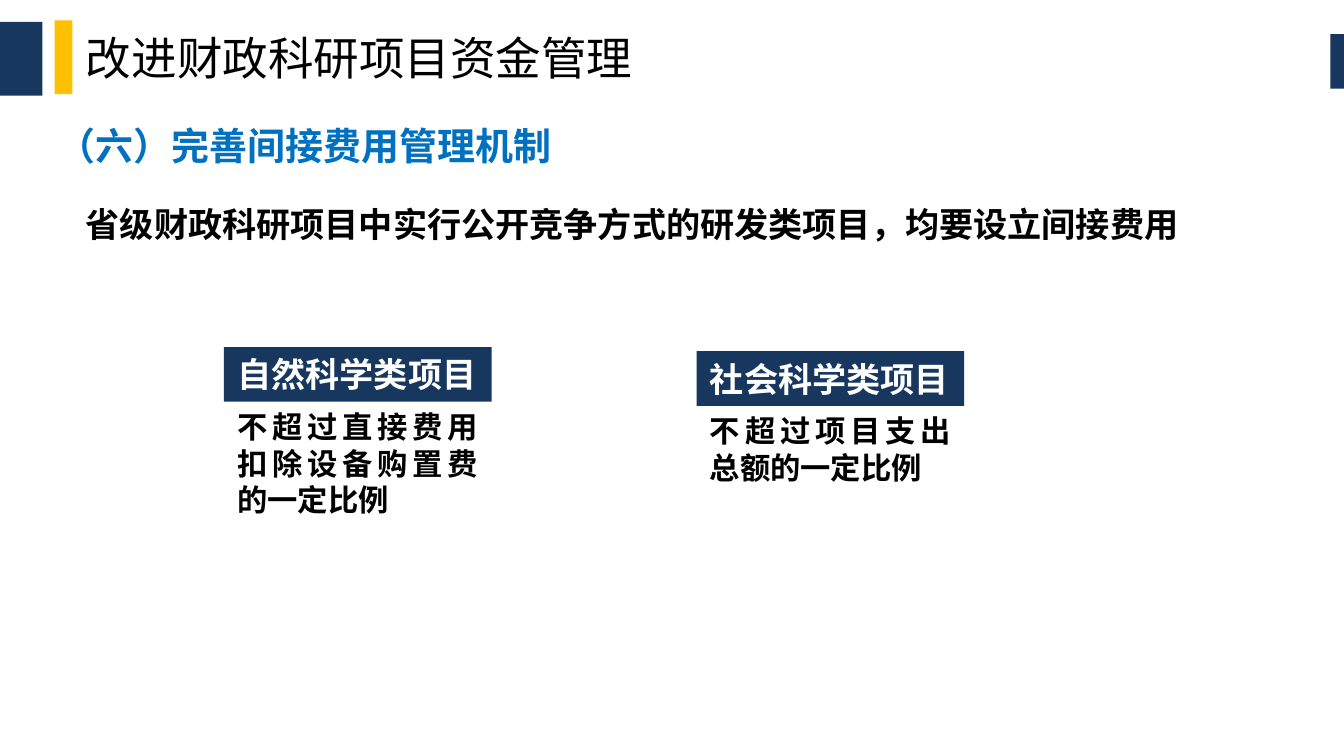
from dataclasses import dataclass

from lxml.etree import SubElement
from pptx import Presentation
from pptx.dml.color import RGBColor
from pptx.enum.lang import MSO_LANGUAGE_ID
from pptx.enum.shapes import MSO_SHAPE
from pptx.enum.text import MSO_ANCHOR, MSO_AUTO_SIZE, PP_ALIGN
from pptx.oxml.ns import qn
from pptx.shapes.autoshape import Shape
from pptx.slide import Slide
from pptx.util import Inches, Pt

NAVY = RGBColor(0x17, 0x37, 0x5E)
GOLD = RGBColor(0xFF, 0xC0, 0x00)
BLUE = RGBColor(0x00, 0x70, 0xC0)
BLACK = RGBColor(0, 0, 0)
WHITE = RGBColor(0xFF, 0xFF, 0xFF)
HAN = "Noto Sans CJK SC"
CARD_W = 1.96
HEAD_H = 0.4


@dataclass(frozen=True)
class Box:
    left: float
    top: float
    width: float
    height: float

    def place(self) -> tuple[int, int, int, int]:
        return (Inches(self.left), Inches(self.top),
                Inches(self.width), Inches(self.height))


@dataclass(frozen=True)
class Bar:
    box: Box
    color: RGBColor


@dataclass(frozen=True)
class Label:
    box: Box
    text: str
    size: int
    face: str = "Arial"
    color: RGBColor = BLACK
    bold: bool = True
    align: PP_ALIGN = PP_ALIGN.LEFT


@dataclass(frozen=True)
class Card:
    left: float
    top: float
    head: str
    body: str
    depth: float


BARS = [
    Bar(Box(-0.01, 0.16, 0.32, 0.54), NAVY),
    Bar(Box(0.4, 0.15, 0.13, 0.54), GOLD),
    Bar(Box(9.74, 0.25, 0.15, 0.4), NAVY),
]
TITLE = Label(Box(0.63, 0.22, 4.73, 0.4), "改进财政科研项目资金管理", 24, HAN, bold=False)
LINES = [
    Label(Box(0.32, 0.85, 3.91, 0.44), "（六）完善间接费用管理机制", 20, HAN, BLUE),
    Label(Box(0.53, 1.44, 8.46, 0.4),
          "省级财政科研项目中实行公开竞争方式的研发类项目，均要设立间接费用", 18, "Calibri"),
]
CARDS = [
    Card(1.64, 2.54, "自然科学类项目", "不超过直接费用扣除设备购置费的一定比例", 0.91),
    Card(5.1, 2.57, "社会科学类项目", "不超过项目支出总额的一定比例", 0.64),
]


def draw_bar(slide: Slide, bar: Bar) -> Shape:
    shape = slide.shapes.add_shape(MSO_SHAPE.RECTANGLE, *bar.box.place())
    shape.shadow.inherit = False
    shape.fill.solid()
    shape.fill.fore_color.rgb = bar.color
    shape.line.fill.background()
    return shape


def write(shape: Shape, label: Label, wrap: bool = True) -> None:
    frame = shape.text_frame
    frame.text = label.text
    frame.word_wrap = wrap
    frame.auto_size = MSO_AUTO_SIZE.SHAPE_TO_FIT_TEXT
    frame.vertical_anchor = MSO_ANCHOR.TOP
    line = frame.paragraphs[0]
    line.alignment = label.align
    font = line.runs[0].font
    font.size = Pt(label.size)
    font.bold = label.bold
    font.color.rgb = label.color
    font.name = label.face
    font.language_id = MSO_LANGUAGE_ID.SIMPLIFIED_CHINESE
    SubElement(line.runs[0]._r.get_or_add_rPr(), qn("a:ea"), typeface=HAN)


def draw_text(slide: Slide, label: Label) -> Shape:
    shape = slide.shapes.add_textbox(*label.box.place())
    write(shape, label)
    return shape


def draw_title(slide: Slide) -> None:
    frame = draw_text(slide, TITLE).text_frame
    frame.vertical_anchor = MSO_ANCHOR.MIDDLE
    frame.margin_left = frame.margin_right = 0
    frame.margin_top = frame.margin_bottom = 0


def draw_card(slide: Slide, card: Card) -> None:
    head = Box(card.left, card.top, CARD_W, HEAD_H)
    body = Box(card.left, card.top + HEAD_H, CARD_W, card.depth)
    shape = draw_bar(slide, Bar(head, NAVY))
    write(shape, Label(head, card.head, 18, color=WHITE), wrap=False)
    draw_text(slide, Label(body, card.body, 16, align=PP_ALIGN.JUSTIFY))


def main() -> None:
    deck = Presentation()
    deck.slide_width = Inches(9.84)
    deck.slide_height = Inches(5.51)
    slide = deck.slides.add_slide(deck.slide_layouts[6])
    for bar in BARS:
        draw_bar(slide, bar)
    draw_title(slide)
    for label in LINES:
        draw_text(slide, label)
    for card in CARDS:
        draw_card(slide, card)
    deck.save("out.pptx")


if __name__ == "__main__":
    main()
